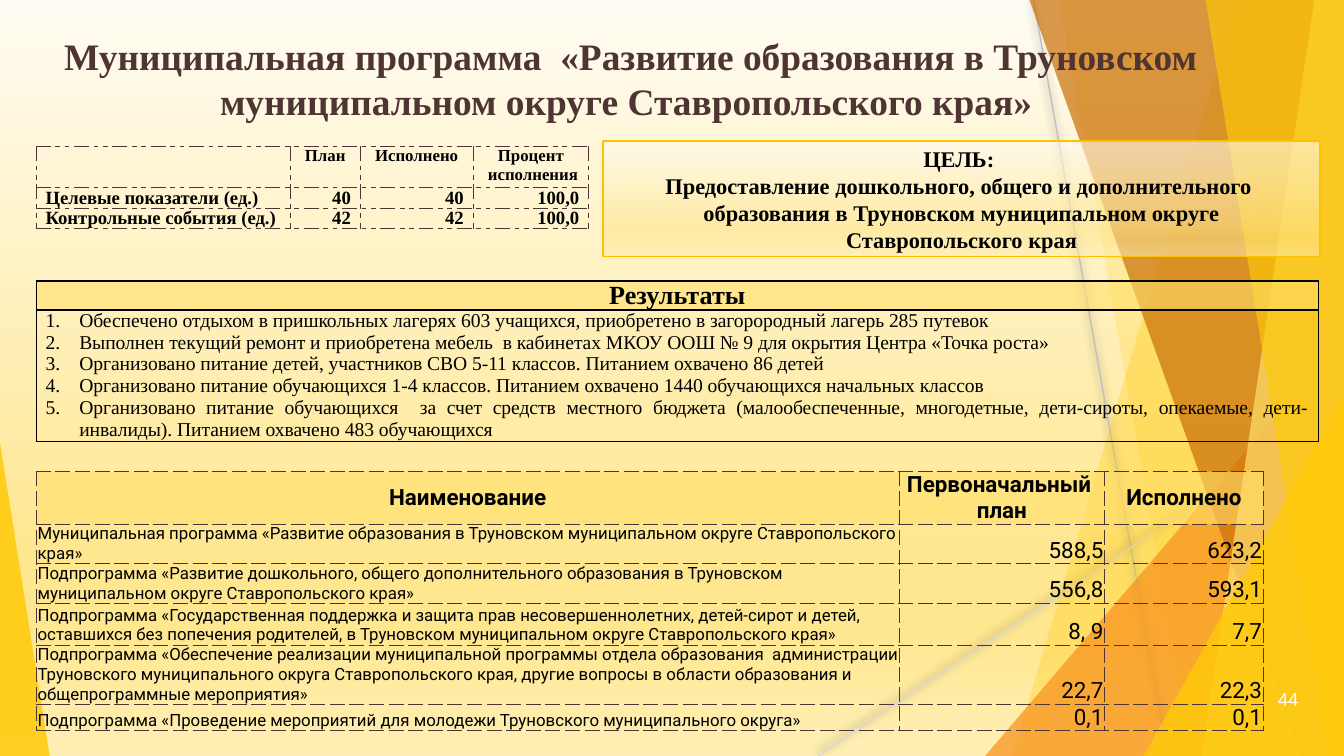
import pptx
import pptx.util
import pptx.dml.color
import pptx.enum.dml
import pptx.enum.shapes
import pptx.enum.text
import pptx.oxml
import pptx.oxml.ns
from dataclasses import dataclass

Inches = pptx.util.Inches
Pt = pptx.util.Pt
Shape = pptx.enum.shapes.MSO_SHAPE
Anchor = pptx.enum.text.MSO_ANCHOR
Align = pptx.enum.text.PP_ALIGN
NS = pptx.oxml.ns.nsdecls("a")
WIDTH = 10
HEIGHT = WIDTH * 9 / 16


@dataclass(frozen=True)
class Theme:
    brown: str = "4F3434"
    black: str = "000000"
    white: str = "FFFFFF"
    gold: str = "FFCA08"
    border_gold: str = "FFC000"
    pale: str = "FFDF6B"
    orange: str = "F8931D"
    rust: str = "CA6F06"
    serif: str = "Times New Roman"
    sans: str = "Roboto"
    plain: str = "Arial"
    title_size: float = 20
    heading_size: float = 14
    text_size: float = 12
    list_size: float = 10.5
    small_size: float = 10
    tiny_size: float = 9
    gradient: tuple = ((0, "FFFCF3"), (74, "FFE790"), (83, "FFE790"), (100, "FFEFB5"))


def rgb(color):
    return pptx.dml.color.RGBColor.from_string(color)


def solid(fill, color, alpha=100):
    fill.solid()
    fill.fore_color.rgb = rgb(color)
    if alpha < 100:
        # The fill stands after any cell borders, so its colour is the last one
        element = fill._xPr.findall(".//" + pptx.oxml.ns.qn("a:srgbClr"))[-1]
        element.append(pptx.oxml.parse_xml(f'<a:alpha {NS} val="{alpha * 1000}"/>'))


def style(para, font, size, color, bold=False, align=Align.LEFT):
    para.alignment = align
    for run in para.runs:
        run.font.name, run.font.size, run.font.bold = font, Pt(size), bold
        run.font.color.rgb = rgb(color)


class SlideBuilder:
    def __init__(self, slide, theme):
        self.slide, self.theme = slide, theme

    def gradient(self, fill, alphas=(100, 100, 100, 100)):
        fill.gradient()
        fill.gradient_angle = 270
        stops = fill._xPr.find(".//" + pptx.oxml.ns.qn("a:gsLst"))
        for stop in list(stops):
            stops.remove(stop)
        for (position, color), alpha in zip(self.theme.gradient, alphas):
            stops.append(pptx.oxml.parse_xml(
                f'<a:gs {NS} pos="{position * 1000}"><a:srgbClr val="{color}">'
                f'<a:alpha val="{alpha * 1000}"/></a:srgbClr></a:gs>'))

    def line(self, x1, y1, x2, y2, color):
        line = self.slide.shapes.add_connector(
            pptx.enum.shapes.MSO_CONNECTOR.STRAIGHT, *map(Inches, (x1, y1, x2, y2)))
        line.line.color.rgb, line.line.width = rgb(color), Pt(0.75)
        line._element.spPr.append(pptx.oxml.parse_xml(
            f'<a:effectLst {NS}><a:outerShdw blurRad="{Pt(5)}" dist="{Pt(2)}" dir="14700000">'
            f'<a:srgbClr val="{self.theme.black}"><a:alpha val="50000"/></a:srgbClr>'
            f'</a:outerShdw></a:effectLst>'))

    def right_band(self, top_x, bottom_x, color, alpha):
        """Draws a slanted band that reaches from its left edge to the right of the slide."""
        points = [(top_x, 0), (WIDTH, 0), (WIDTH, HEIGHT), (bottom_x, HEIGHT)]
        corners = [(Inches(x), Inches(y)) for x, y in points]
        outline = self.slide.shapes.build_freeform(*corners[0], scale=1.0)
        outline.add_line_segments(corners[1:], close=True)
        self.finish(outline.convert_to_shape(), color, alpha)

    def triangle(self, left, top, width, tip, color, alpha):
        shape = self.slide.shapes.add_shape(
            Shape.ISOSCELES_TRIANGLE, *map(Inches, (left, top, width, HEIGHT - top)))
        shape.adjustments[0] = tip
        self.finish(shape, color, alpha)

    def finish(self, shape, color, alpha):
        shape.shadow.inherit = False
        solid(shape.fill, color, alpha)
        shape.line.fill.background()

    def title(self, text, left, top, width, height):
        title = self.slide.shapes.title
        title.left, title.top, title.width, title.height = map(Inches, (left, top, width, height))
        self.slide.shapes.element.append(title.element)  # in front of the bands
        frame = title.text_frame
        frame.text, frame.word_wrap, frame.vertical_anchor = text, True, Anchor.TOP
        frame.auto_size = pptx.enum.text.MSO_AUTO_SIZE.NONE
        style(frame.paragraphs[0], self.theme.serif, self.theme.title_size,
              self.theme.brown, True, Align.CENTER)

    def goal(self, text, left, top, width, height):
        box = self.slide.shapes.add_shape(
            Shape.RECTANGLE, *map(Inches, (left, top, width, height)))
        box.shadow.inherit = False
        self.gradient(box.fill, (60, 63, 54, 57))
        box.line.color.rgb, box.line.width = rgb(self.theme.border_gold), Pt(1)
        box.text_frame.text = text
        box.text_frame.vertical_anchor = Anchor.MIDDLE
        for para in box.text_frame.paragraphs:
            style(para, self.theme.serif, self.theme.text_size, self.theme.black, True, Align.CENTER)

    def page_number(self, text, left, top, width, height):
        box = self.slide.shapes.add_textbox(*map(Inches, (left, top, width, height)))
        box.text_frame.word_wrap = True
        box.text_frame.text = text
        style(box.text_frame.paragraphs[0], self.theme.plain, self.theme.small_size, self.theme.white)

    def table(self, left, top, columns, heights, rows, border, margin):
        """Makes a table with one border style and gives it back for text styling."""
        color, width, dash = border
        table = self.slide.shapes.add_table(
            len(rows), len(columns), Inches(left), Inches(top),
            Inches(sum(columns)), Inches(sum(heights))).table
        table.first_row = table.horz_banding = False
        for column, size in zip(table.columns, columns):
            column.width = Inches(size)
        for row, size, texts in zip(table.rows, heights, rows):
            row.height = Inches(size)
            for cell, text in zip(row.cells, texts):
                cell.text = text
                cell.margin_left = cell.margin_right = Inches(margin)
                cell.margin_top = cell.margin_bottom = 0
                for side in "LRTB":
                    cell._tc.get_or_add_tcPr().append(pptx.oxml.parse_xml(
                        f'<a:ln{side} {NS} w="{Pt(width)}"><a:solidFill><a:srgbClr val="{color}"/>'
                        f'</a:solidFill><a:prstDash val="{dash}"/></a:ln{side}>'))
                cell.fill.background()
        return table

    def cell(self, cell, font, size, bold, align, anchor=Anchor.TOP, shaded=False):
        cell.vertical_anchor = anchor
        if shaded:
            solid(cell.fill, self.theme.pale, 60)
        for para in cell.text_frame.paragraphs:
            style(para, font, size, self.theme.black, bold, align)

    def number(self, para):
        props = para._p.get_or_add_pPr()
        props.set("marL", str(Inches(0.25)))
        props.set("indent", str(Inches(-0.25)))
        props.append(pptx.oxml.parse_xml(f'<a:buFont {NS} typeface="+mj-lt"/>'))
        props.append(pptx.oxml.parse_xml(f'<a:buAutoNum {NS} type="arabicPeriod"/>'))


RESULTS = [
    "Обеспечено отдыхом в пришкольных лагерях 603 учащихся, приобретено в загорородный лагерь 285 путевок",
    "Выполнен текущий ремонт и приобретена мебель  в кабинетах МКОУ ООШ № 9 для окрытия Центра «Точка роста»",
    "Организовано питание детей, участников СВО 5-11 классов. Питанием охвачено 86 детей",
    "Организовано питание обучающихся 1-4 классов. Питанием охвачено 1440 обучающихся начальных классов",
    "Организовано питание обучающихся  за счет средств местного бюджета (малообеспеченные, многодетные, "
    "дети-сироты, опекаемые, дети-инвалиды). Питанием охвачено 483 обучающихся",
]
INDICATORS = [
    ("", "План", "Исполнено", "Процент\n исполнения"),
    ("Целевые показатели (ед.)", "40", "40", "100,0"),
    ("Контрольные события (ед.)", "42", "42", "100,0"),
]
FUNDING = [
    ("Наименование", "Первоначальный \nплан", "Исполнено"),
    ("Муниципальная программа «Развитие образования в Труновском муниципальном округе "
     "Ставропольского края»", "588,5", "623,2"),
    ("Подпрограмма «Развитие дошкольного, общего дополнительного образования в Труновском "
     "муниципальном округе Ставропольского края»", "556,8", "593,1"),
    ("Подпрограмма «Государственная поддержка и защита прав несовершеннолетних, детей-сирот и детей, "
     "оставшихся без попечения родителей, в Труновском муниципальном округе Ставропольского края»",
     "8, 9", "7,7"),
    ("Подпрограмма «Обеспечение реализации муниципальной программы отдела образования  администрации "
     "Труновского муниципального округа Ставропольского края, другие вопросы в области образования и  "
     "общепрограммные мероприятия»", "22,7", "22,3"),
    ("Подпрограмма «Проведение мероприятий для молодежи Труновского муниципального округа»", "0,1", "0,1"),
]


def main():
    theme = Theme()
    deck = pptx.Presentation()
    deck.slide_width, deck.slide_height = Inches(WIDTH), Inches(HEIGHT)
    page = SlideBuilder(deck.slides.add_slide(deck.slide_layouts[5]), theme)

    # Background, thin lines and slanted bands
    page.gradient(page.slide.background.fill)
    page.line(7.69, 0, 8.69, HEIGHT, "BFBFBF")
    page.line(WIDTH, 3.02, 6.09, HEIGHT, "D9D9D9")
    page.right_band(9.21, 7.53, theme.gold, 30)
    page.right_band(7.88, 8.87, theme.gold, 20)
    page.triangle(7.33, 2.5, 2.67, 1, theme.orange, 72)
    page.right_band(7.66, 9.68, theme.rust, 70)
    page.right_band(9.78, 8.94, theme.pale, 70)
    page.right_band(8.97, 9.88, theme.gold, 65)
    page.triangle(8.51, 2.94, 1.49, 1, theme.gold, 80)
    page.triangle(0, 3.29, 0.37, 0, theme.gold, 85)

    page.title("Муниципальная программа  «Развитие образования в Труновском муниципальном округе "
               "Ставропольского края» ", 0.37, 0.2, 8.65, 0.66)

    # Funding by subprogramme
    funding = page.table(0.27, 3.51, [6.42, 1.53, 1.18], [0.36, 0.23, 0.24, 0.31, 0.36, 0.18],
                         FUNDING, (theme.brown, 0.5, "sysDash"), 0.01)
    for r, row in enumerate(funding.rows):
        for c, cell in enumerate(row.cells):
            if r == 0:
                page.cell(cell, theme.sans, theme.text_size, True, Align.CENTER, Anchor.MIDDLE, True)
            elif c == 0:
                anchor = Anchor.TOP if r == 1 else Anchor.BOTTOM
                page.cell(cell, theme.sans, theme.tiny_size, False, Align.LEFT, anchor)
            else:
                page.cell(cell, theme.sans, theme.text_size, False, Align.RIGHT, Anchor.BOTTOM)

    # Indicators
    indicators = page.table(0.27, 1.09, [1.89, 0.52, 0.84, 0.86], [0.3, 0.15, 0.15],
                            INDICATORS, (theme.brown, 0.5, "sysDashDotDot"), 0.07)
    for r, row in enumerate(indicators.rows):
        for c, cell in enumerate(row.cells):
            align = Align.CENTER if r == 0 else Align.RIGHT if c else Align.JUSTIFY
            page.cell(cell, theme.serif, theme.small_size if r else theme.tiny_size, True, align)

    # Results
    results = page.table(0.27, 2.09, [9.54], [0.19, 0.98], [("Результаты",), ("\n".join(RESULTS),)],
                         (theme.black, 1, "solid"), 0.07)
    page.cell(results.cell(0, 0), theme.serif, theme.heading_size, True, Align.CENTER, shaded=True)
    for para in results.cell(1, 0).text_frame.paragraphs:
        page.number(para)
    page.cell(results.cell(1, 0), theme.serif, theme.list_size, False, Align.JUSTIFY)

    # Goal and page number
    page.goal("ЦЕЛЬ: \nПредоставление дошкольного, общего и дополнительного  образования в Труновском "
              "муниципальном округе Ставропольского края", 4.49, 1.05, 5.33, 0.86)
    page.page_number("44", 9.41, 5.07, 0.56, 0.3)
    deck.save("out.pptx")


if __name__ == "__main__":
    main()
